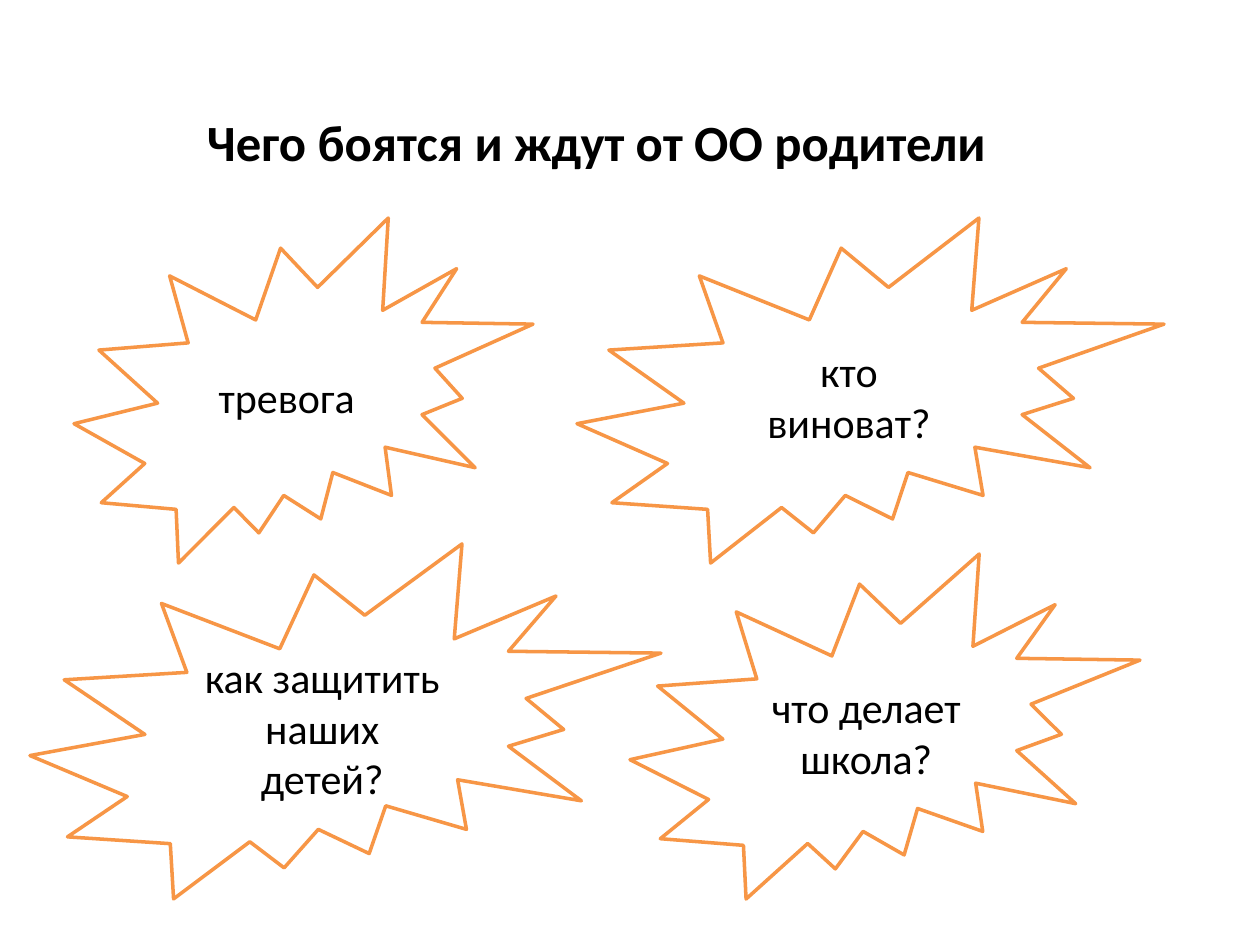
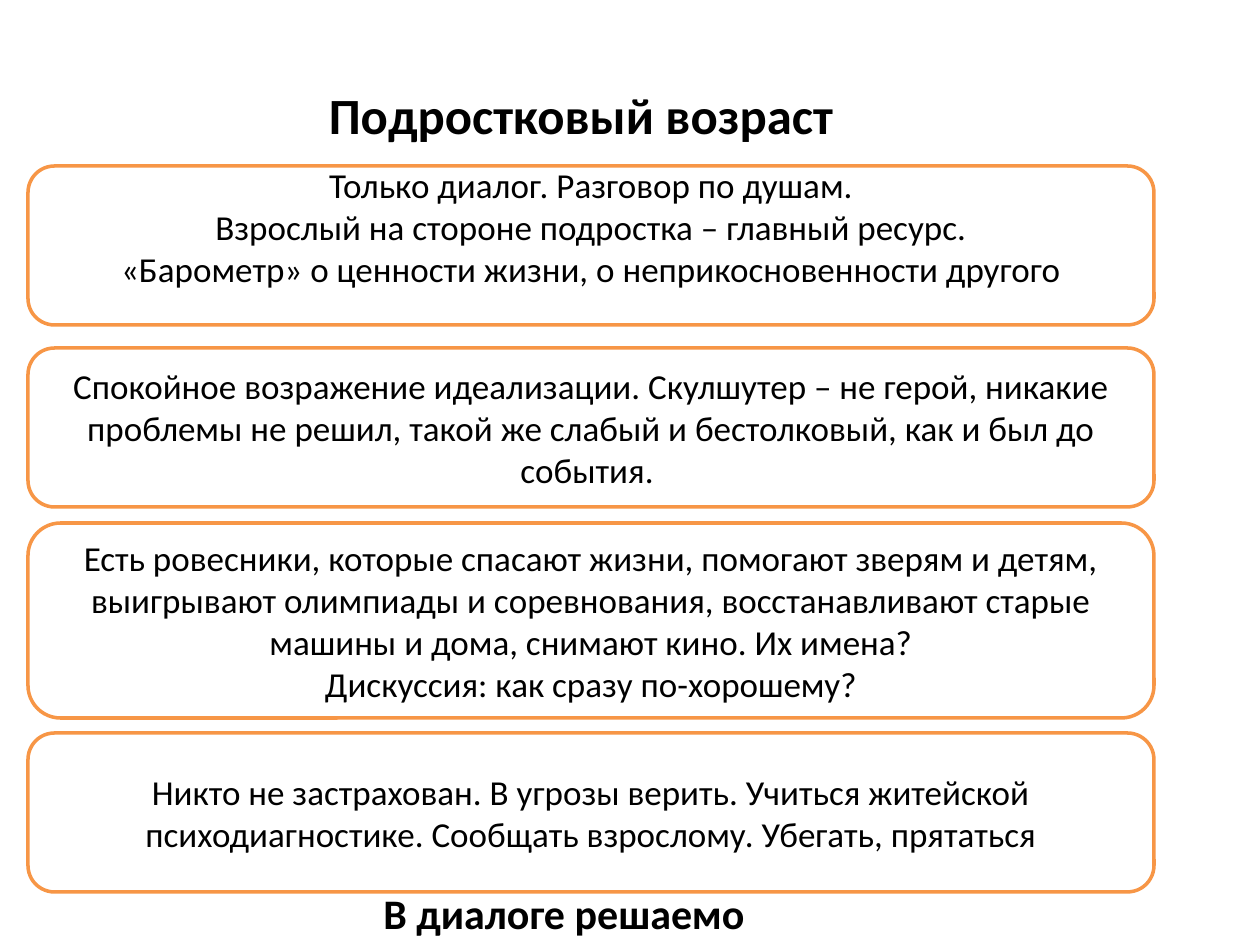
from pptx import Presentation
from pptx.dml.color import RGBColor
from pptx.enum.shapes import MSO_SHAPE
from pptx.enum.text import MSO_ANCHOR, PP_ALIGN
from pptx.util import Emu, Pt

# Content: places are (left, top, width, height) in px
FEARS_TITLE = ("Чего боятся и ждут от ОО родители", (30, 105, 1134, 624))
FEARS = [
    ("тревога", (74, 218, 459, 345)),
    ("кто виноват?", (577, 218, 587, 345)),
    ("как защитить наших детей?", (30, 544, 631, 355)),
    ("что делает школа?", (630, 554, 510, 345)),
]

TEENS_TITLE = ("Подростковый возраст ", (20, 78, 1134, 624))
BAND_LEFT, BAND_WIDTH = 28, 1126
# Each band: top, height, extra space under the text, paragraphs
BANDS = [
    (166, 159, 38, [
        "Только диалог. Разговор по душам.",
        "Взрослый на стороне подростка – главный ресурс.",
        "«Барометр» о ценности жизни, о неприкосновенности другого",
    ]),
    (348, 159, 0, [
        "Спокойное возражение идеализации. Скулшутер – не герой, никакие "
        "проблемы не решил, такой же слабый и бестолковый, как и был до события. ",
    ]),
    (523, 195, 0, [
        "Есть ровесники, которые спасают жизни, помогают зверям и детям, "
        "выигрывают олимпиады и соревнования, восстанавливают старые машины "
        "и дома, снимают кино. Их имена?",
        "Дискуссия: как сразу по-хорошему?",
    ]),
    (733, 159, 0, [
        "Никто не застрахован. В угрозы верить. Учиться житейской "
        "психодиагностике. Сообщать взрослому. Убегать, прятаться",
    ]),
]
CONCLUSION = ("В диалоге решаемо", (249, 881, 630, 64))

# Shared style
FONT = "Calibri"
TITLE_SIZE, LARGE_SIZE, BODY_SIZE = 29, 24, 20
BLACK = RGBColor(0x00, 0x00, 0x00)
WHITE = RGBColor(0xFF, 0xFF, 0xFF)
ORANGE = RGBColor(0xF7, 0x96, 0x46)
SEAL, BAND = MSO_SHAPE.EXPLOSION2, MSO_SHAPE.ROUNDED_RECTANGLE
CENTER = PP_ALIGN.CENTER
TOP, MIDDLE = MSO_ANCHOR.TOP, MSO_ANCHOR.MIDDLE
PX_PER_INCH = 126
PAD = 6


def px(length):
    return Emu(round(length * 914400 / PX_PER_INCH))


def write(shape, paragraphs, size, bold=False, anchor=TOP):
    frame = shape.text_frame
    frame.word_wrap = True
    frame.vertical_anchor = anchor
    frame.text = "\n".join(paragraphs)
    for paragraph in frame.paragraphs:
        paragraph.alignment = CENTER
        font = paragraph.font
        font.name, font.size, font.bold = FONT, Pt(size), bold
        font.color.rgb = BLACK


def add_heading(page, text, place, size=TITLE_SIZE):
    box = page.shapes.add_textbox(*map(px, place))
    write(box, [text], size, bold=True)


def add_outlined(page, kind, place, paragraphs, size):
    shape = page.shapes.add_shape(kind, *map(px, place))
    shape.shadow.inherit = False
    shape.fill.solid()
    shape.fill.fore_color.rgb = WHITE
    shape.line.color.rgb = ORANGE
    shape.line.width = Pt(2)
    write(shape, paragraphs, size, anchor=MIDDLE)
    return shape


def build_fears(page):
    add_heading(page, *FEARS_TITLE)
    for text, place in FEARS:
        add_outlined(page, SEAL, place, [text], LARGE_SIZE)


def build_teens(page):
    add_heading(page, *TEENS_TITLE)
    for top, height, space_under, paragraphs in BANDS:
        place = (BAND_LEFT, top, BAND_WIDTH, height)
        band = add_outlined(page, BAND, place, paragraphs, BODY_SIZE)
        band.text_frame.margin_bottom = px(PAD + space_under)
    add_heading(page, *CONCLUSION, size=LARGE_SIZE)


def main():
    deck = Presentation()
    deck.slide_width, deck.slide_height = px(1260), px(945)
    blank = deck.slide_layouts[6]
    for build in (build_fears, build_teens):
        build(deck.slides.add_slide(blank))
    deck.save("out.pptx")


if __name__ == "__main__":
    main()
